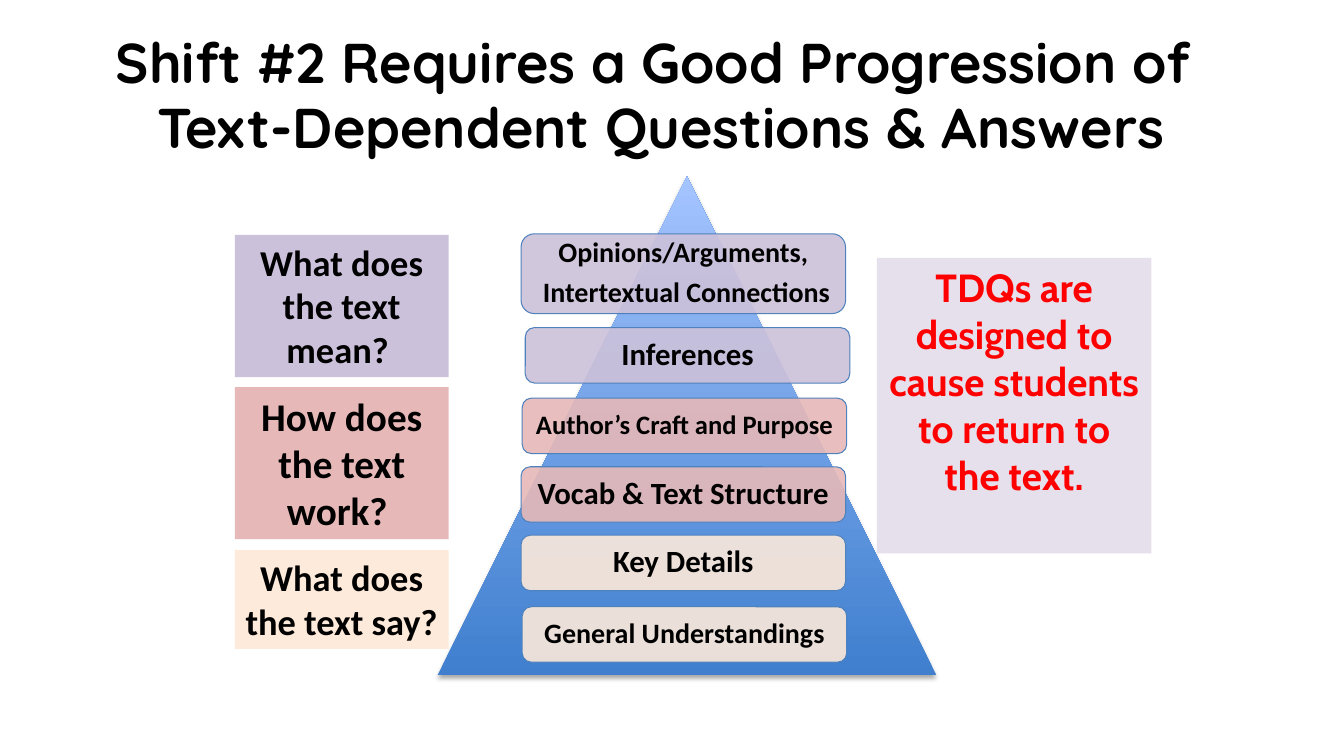
"""Builds the slide on the progression of text-dependent questions."""
from lxml import etree
from pptx import Presentation
from pptx.dml.color import RGBColor
from pptx.enum.shapes import MSO_SHAPE
from pptx.enum.text import MSO_ANCHOR, PP_ALIGN
from pptx.oxml.ns import qn
from pptx.util import Pt

TRIANGLE = MSO_SHAPE.ISOSCELES_TRIANGLE
ROUNDED = MSO_SHAPE.ROUNDED_RECTANGLE
RECTANGLE = MSO_SHAPE.RECTANGLE
TOP, MIDDLE = MSO_ANCHOR.TOP, MSO_ANCHOR.MIDDLE
CENTER = PP_ALIGN.CENTER

BLACK = RGBColor(0x00, 0x00, 0x00)
RED = RGBColor(0xFF, 0x00, 0x00)
PURPLE = RGBColor(0xCC, 0xC1, 0xDA)
PINK = RGBColor(0xE6, 0xB9, 0xB8)
CREAM = RGBColor(0xFD, 0xEA, 0xDA)
LAVENDER = RGBColor(0xE6, 0xE0, 0xEC)
OUTLINE = RGBColor(0x4F, 0x81, 0xBD)
DEEP_BLUE = RGBColor(0x3F, 0x7F, 0xCE)
PALE_BLUE = RGBColor(0xA4, 0xC4, 0xFF)

LEVELS = [
    (372.2, 167, 57, "Opinions/Arguments,\n Intertextual Connections", 20, PURPLE),
    (375.2, 234, 39.6, "Inferences", 22, PURPLE),
    (373, 284.4, 39.6, "Author’s Craft and Purpose", 19, PINK),
    (372.2, 333.4, 39.6, "Vocab & Text Structure", 22, PINK),
    (372.2, 382.3, 39.6, "Key Details", 22, CREAM),
    (373, 433.4, 39.6, "General Understandings", 20, CREAM),
]
QUESTIONS = [
    (167.8, 101.5, "What does the text mean? ", 26, PURPLE),
    (276.5, 108.7, "How does the text work? ", 28, PINK),
    (393, 70.5, "What does the text say?", 26, CREAM),
]


def write(shape, text, *, size, font="Calibri", color=BLACK, anchor=TOP,
          spacing=1.0, after=0, inset=7.2):
    """Fill a shape with centred bold text, one paragraph per line."""
    frame = shape.text_frame
    frame.word_wrap = True
    frame.vertical_anchor = anchor
    frame.margin_left = frame.margin_right = Pt(inset)
    frame.margin_top = frame.margin_bottom = Pt(3.6)
    frame.text = text
    for para in frame.paragraphs:
        para.alignment = CENTER
        para.line_spacing = spacing
        para.space_after = Pt(after)
        for span in para.runs:
            span.font.name = font
            span.font.size = Pt(size)
            span.font.bold = True
            span.font.color.rgb = color


class Painter:
    """Holds the slide and the style of its elements."""

    def __init__(self, page):
        self.page = page

    def shape(self, kind, left, top, width, height):
        """Add a preset shape without line or shadow."""
        shape = self.page.shapes.add_shape(
            kind, Pt(left), Pt(top), Pt(width), Pt(height))
        shape.shadow.inherit = False
        shape.line.fill.background()
        return shape

    def title(self, text):
        """Add the heading."""
        box = self.page.shapes.add_textbox(Pt(13.7), Pt(31.7), Pt(916.6), Pt(74.9))
        write(box, text, size=40, font="Quicksand", anchor=MIDDLE, spacing=0.96)

    def pyramid(self, left, top, size):
        """Add the shaded triangle with a soft shadow below."""
        shape = self.shape(TRIANGLE, left, top, size, size)
        shape.fill.gradient()
        shape.fill.gradient_angle = 90
        for stop, color in zip(shape.fill.gradient_stops, (DEEP_BLUE, PALE_BLUE)):
            stop.color.rgb = color
        effects = shape.element.spPr.find(qn("a:effectLst"))
        shadow = etree.SubElement(
            effects, qn("a:outerShdw"), blurRad=str(Pt(3.1)), dist=str(Pt(1.8)),
            dir="5400000", rotWithShape="0")
        black = etree.SubElement(shadow, qn("a:srgbClr"), val=str(BLACK))
        etree.SubElement(black, qn("a:alpha"), val="35000")

    def level(self, left, top, height, text, size, color):
        """Add a translucent rounded bar of the pyramid."""
        shape = self.shape(ROUNDED, left, top, 231.8, height)
        shape.fill.solid()
        shape.fill.fore_color.rgb = color
        paint = shape.element.spPr.find(qn("a:solidFill"))
        etree.SubElement(paint[0], qn("a:alpha"), val="90000")
        shape.line.color.rgb = OUTLINE
        shape.line.width = Pt(0.75)
        write(shape, text, size=size, anchor=MIDDLE, spacing=0.9, after=0.35 * size)

    def panel(self, left, top, width, height, text, fill, **style):
        """Add a plain filled rectangle with text."""
        shape = self.shape(RECTANGLE, left, top, width, height)
        shape.fill.solid()
        shape.fill.fore_color.rgb = fill
        write(shape, text, **style)


def main():
    """Build and save the deck."""
    deck = Presentation()
    deck.slide_width, deck.slide_height = Pt(960), Pt(540)
    painter = Painter(deck.slides.add_slide(deck.slide_layouts[6]))
    painter.title("Shift #2 Requires a Good Progression of \v"
                  "Text-Dependent Questions & Answers")
    painter.pyramid(312.5, 126, 356.4)
    for level in LEVELS:
        painter.level(*level)
    for top, height, text, size, color in QUESTIONS:
        painter.panel(167.8, top, 152.6, height, text, color, size=size)
    painter.panel(626.4, 184.3, 196, 211,
                  "TDQs are designed to cause students to return to the text.",
                  LAVENDER, size=28, font="Cabin", color=RED)
    deck.save("out.pptx")


if __name__ == "__main__":
    main()
